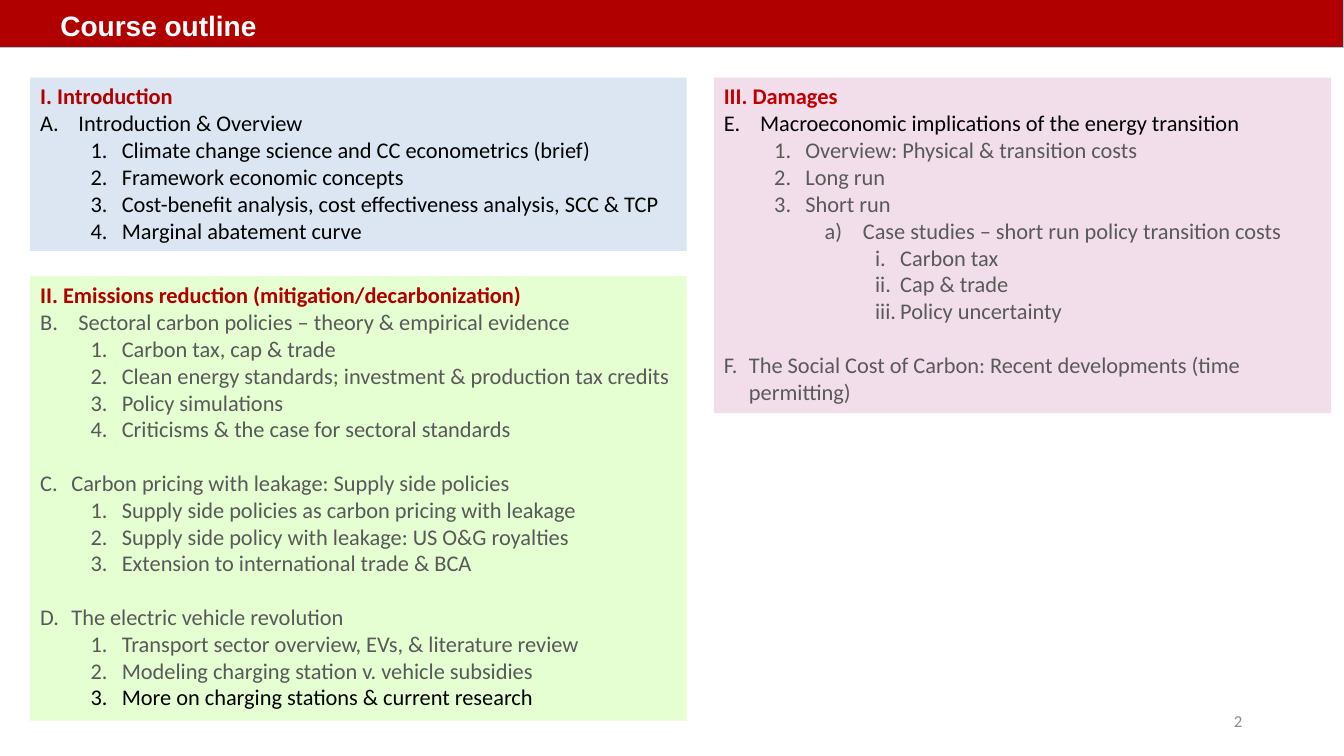
import pptx
import pptx.util
import pptx.dml.color
import pptx.enum.shapes
import pptx.enum.text
import pptx.oxml.ns
import lxml.etree

RGB = pptx.dml.color.RGBColor
ALIGN = pptx.enum.text.PP_ALIGN
ANCHOR = pptx.enum.text.MSO_ANCHOR
AUTO_SIZE = pptx.enum.text.MSO_AUTO_SIZE
RECT = pptx.enum.shapes.MSO_SHAPE.RECTANGLE

PX = 9144  # 100 px to the inch

RED = RGB(0xB0, 0x00, 0x00)
BRIGHT_RED = RGB(0xC0, 0x00, 0x00)
SKY = RGB(0x93, 0xCD, 0xDD)
BLUE = RGB(0xDC, 0xE6, 0xF2)
PINK = RGB(0xF2, 0xDE, 0xEB)
GREEN = RGB(0xE5, 0xFE, 0xD2)
BLACK = RGB(0x00, 0x00, 0x00)
GRAY = RGB(0x59, 0x59, 0x59)
PALE_GRAY = RGB(0x8C, 0x8C, 0x8C)
WHITE = RGB(0xFF, 0xFF, 0xFF)

# Numbering scheme, left margin and hanging indent by outline level;
# the top level's indent comes with each topic.
LEVELS = {
    1: ("arabicPeriod", 81, 31),
    2: ("alphaLcParenR", 138, 38),
    3: ("romanLcPeriod", 175, 25),
}

# Each topic: indent, colour, title, then (level, colour, text) entries.
SECTIONS = [
    ("I. Introduction", RED, BLUE, (30, 77, 651, 172), 1, [
        (38, BLACK, "Introduction & Overview", [
            (1, BLACK, "Climate change science and CC econometrics (brief)"),
            (1, BLACK, "Framework economic concepts"),
            (1, BLACK, "Cost-benefit analysis, cost effectiveness analysis, SCC & TCP"),
            (1, BLACK, "Marginal abatement curve"),
        ]),
    ]),
    ("III. Damages", BRIGHT_RED, PINK, (708, 77, 612, 333), 5, [
        (36, BLACK, "Macroeconomic implications of the energy transition", [
            (1, GRAY, "Overview: Physical & transition costs"),
            (1, GRAY, "Long run"),
            (1, GRAY, "Short run"),
            (2, GRAY, "Case studies – short run policy transition costs"),
            (3, GRAY, "Carbon tax"),
            (3, GRAY, "Cap & trade"),
            (3, GRAY, "Policy uncertainty"),
        ]),
        (25, GRAY, "The Social Cost of Carbon: Recent developments (time permitting)", []),
    ]),
    ("II. Emissions reduction (mitigation/decarbonization)", RED, GREEN, (30, 274, 651, 441), 2, [
        (38, GRAY, "Sectoral carbon policies – theory & empirical evidence", [
            (1, GRAY, "Carbon tax, cap & trade"),
            (1, GRAY, "Clean energy standards; investment & production tax credits"),
            (1, GRAY, "Policy simulations"),
            (1, GRAY, "Criticisms & the case for sectoral standards"),
        ]),
        (31, GRAY, "Carbon pricing with leakage: Supply side policies", [
            (1, GRAY, "Supply side policies as carbon pricing with leakage"),
            (1, GRAY, "Supply side policy with leakage: US O&G royalties"),
            (1, GRAY, "Extension to international trade & BCA"),
        ]),
        (31, GRAY, "The electric vehicle revolution", [
            (1, GRAY, "Transport sector overview, EVs, & literature review"),
            (1, GRAY, "Modeling charging station v. vehicle subsidies"),
            (1, BLACK, "More on charging stations & current research"),
        ]),
    ]),
]


def write(tf, text, color, size=16, font="Calibri", bold=False, align=ALIGN.LEFT,
          level=0, margin=0, hang=0, number=None, start=1, before=0):
    """Add a paragraph, filling the frame's empty first one if there is one."""
    p = tf.paragraphs[0] if not tf.text else tf.add_paragraph()
    p.alignment = align
    p.level = level
    p.space_before = pptx.util.Pt(before)
    r = p.add_run()
    r.text = text
    r.font.size = pptx.util.Pt(size)
    r.font.name = font
    r.font.bold = bold
    r.font.color.rgb = color
    pPr = p._p.get_or_add_pPr()
    pPr.set("marL", str(margin * PX))
    pPr.set("indent", str(-hang * PX))
    if number:
        lxml.etree.SubElement(pPr, pptx.oxml.ns.qn("a:buFont"), typeface="+mj-lt")
        bu = lxml.etree.SubElement(pPr, pptx.oxml.ns.qn("a:buAutoNum"), type=number)
        if start > 1:
            bu.set("startAt", str(start))


def add_box(s, box, fill):
    sp = s.shapes.add_shape(RECT, *[v * PX for v in box])
    sp.shadow.inherit = False
    sp.fill.solid()
    sp.fill.fore_color.rgb = fill
    sp.line.fill.background()
    sp.text_frame.word_wrap = True
    return sp


prs = pptx.Presentation()
prs.slide_width = 1333 * PX
prs.slide_height = 750 * PX
s = prs.slides.add_slide(prs.slide_layouts[6])

banner = add_box(s, (0, 0, 1333, 47), RED)
banner.line.color.rgb = SKY
banner.line.width = 0
banner.text_frame.vertical_anchor = ANCHOR.BOTTOM
write(banner.text_frame, "Course outline", WHITE, size=20, font="Arial", bold=True, margin=50)

page = s.shapes.add_textbox(942 * PX, 695 * PX, 300 * PX, 40 * PX)
page.text_frame.word_wrap = True
page.text_frame.vertical_anchor = ANCHOR.MIDDLE
write(page.text_frame, "2", PALE_GRAY, size=12, align=ALIGN.RIGHT)

for heading, heading_color, fill, box, start, topics in SECTIONS:
    tf = add_box(s, box, fill).text_frame
    tf.vertical_anchor = ANCHOR.TOP
    tf.auto_size = AUTO_SIZE.SHAPE_TO_FIT_TEXT
    write(tf, heading, heading_color, bold=True)
    for i, (indent, color, topic, entries) in enumerate(topics):
        write(tf, topic, color, margin=indent, hang=indent, number="alphaUcPeriod",
              start=start, before=19 if i else 0)
        for level, entry_color, text in entries:
            number, margin, hang = LEVELS[level]
            write(tf, text, entry_color, level=level, margin=margin, hang=hang, number=number)

prs.save("out.pptx")
